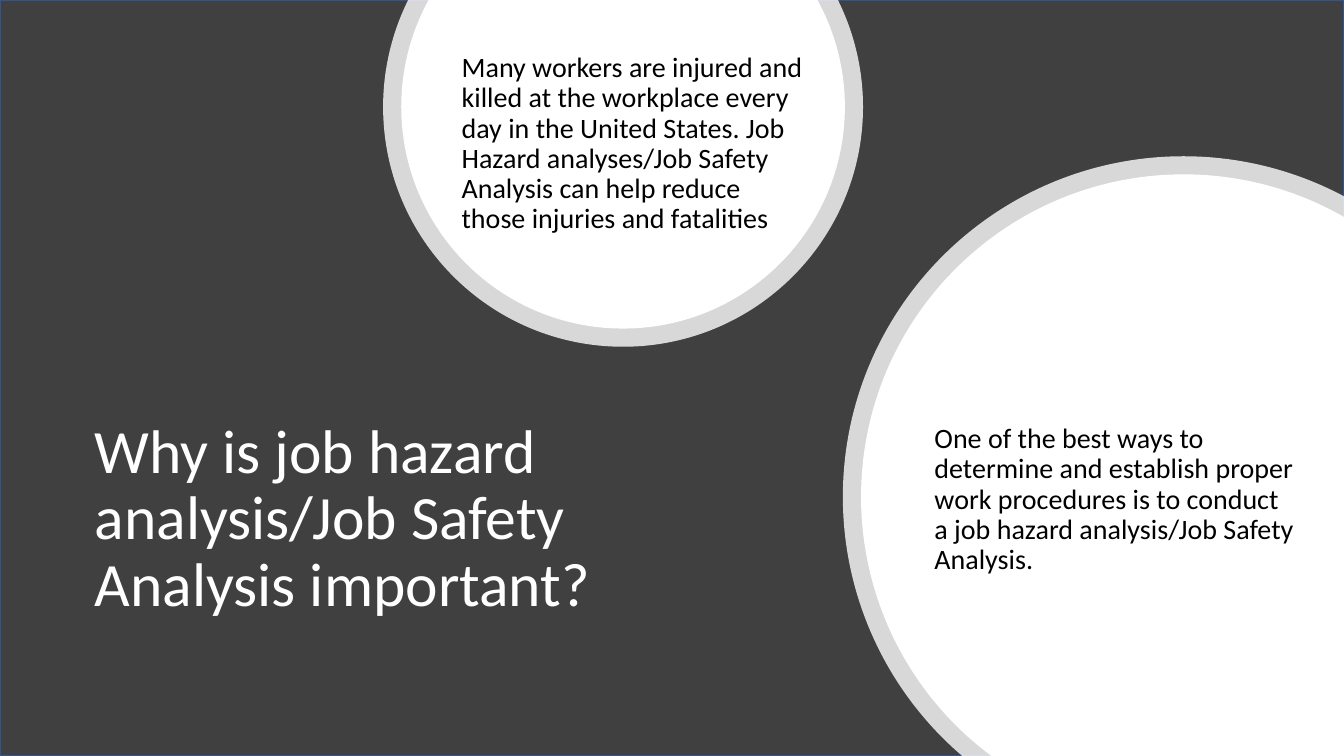
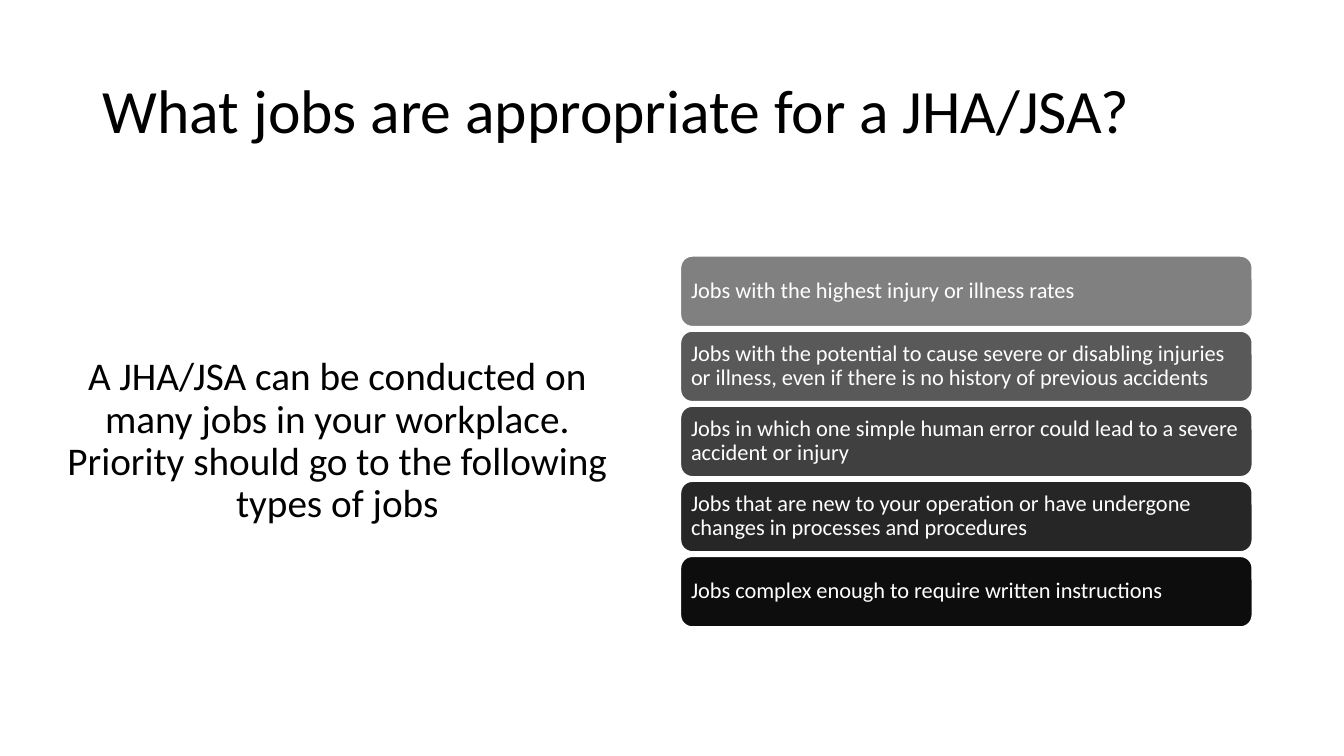
from itertools import pairwise
from math import acos, asin, cos, degrees, radians, sin, tan

from lxml import etree
from pptx import Presentation
from pptx.dml.color import RGBColor
from pptx.enum.shapes import MSO_SHAPE
from pptx.enum.text import MSO_ANCHOR, MSO_AUTO_SIZE, PP_ALIGN
from pptx.oxml.ns import qn
from pptx.util import Inches, Pt

RECTANGLE, ROUNDED = MSO_SHAPE.RECTANGLE, MSO_SHAPE.ROUNDED_RECTANGLE
MIDDLE, NO_AUTOFIT = MSO_ANCHOR.MIDDLE, MSO_AUTO_SIZE.NONE
LEFT, CENTER = PP_ALIGN.LEFT, PP_ALIGN.CENTER

FONT = "Calibri"
WHITE = RGBColor(0xFF, 0xFF, 0xFF)
BLACK = RGBColor(0, 0, 0)
CHARCOAL = RGBColor(0x40, 0x40, 0x40)
EDGE_BLUE = RGBColor(0x32, 0x54, 0x91)
SLIDE_WIDTH, SLIDE_HEIGHT = 13.33, 7.5
TITLE_SIZE = 44

# Content: slide 1
WHY_TITLE = "Why is job hazard analysis/Job Safety Analysis important?"
RING = 0.18
BUBBLES = [  # centre x, centre y, outer radius, text box, text
    (6.18, 1.06, 2.38, (4.48, 0.22, 3.58, 2.42),
     "Many workers are injured and killed at the workplace every day in the "
     "United States. Job Hazard analyses/Job Safety Analysis can help reduce "
     "those injuries and fatalities"),
    (11.74, 4.93, 3.38, (9.17, 3.44, 3.8, 3.04),
     "One of the best ways to determine and establish proper work procedures "
     "is to conduct a job hazard analysis/Job Safety Analysis."),
]

# Content: slide 2
JOBS_TITLE = "What jobs are appropriate for a JHA/JSA?"
PRIORITY = ("A JHA/JSA can be conducted on many jobs in your workplace. "
            "Priority should go to the following types of jobs")
JOB_TYPES = [  # grey level, text
    (0x80, "Jobs with the highest injury or illness rates"),
    (0x59, "Jobs with the potential to cause severe or disabling injuries or "
           "illness, even if there is no history of previous accidents"),
    (0x40, "Jobs in which one simple human error could lead to a severe "
           "accident or injury"),
    (0x26, "Jobs that are new to your operation or have undergone changes in "
           "processes and procedures"),
    (0x0D, "Jobs complex enough to require written instructions"),
]
CARD_LEFT, CARD_TOP, CARD_WIDTH, CARD_HEIGHT = 6.75, 2.54, 5.67, 0.7
CARD_BOTTOM = 6.22
CARD_STEP = (CARD_BOTTOM - CARD_TOP - CARD_HEIGHT) / (len(JOB_TYPES) - 1)


def write(shape, text, size, color, align=LEFT, before=0):
    frame = shape.text_frame
    frame.word_wrap = True
    frame.auto_size = NO_AUTOFIT
    frame.vertical_anchor = MIDDLE
    paragraph = frame.paragraphs[0]
    paragraph.alignment = align
    paragraph.line_spacing = 0.9
    paragraph.space_before = Pt(before)
    run = paragraph.add_run()
    run.text = text
    run.font.name, run.font.size = FONT, Pt(size)
    run.font.color.rgb = color


def paint(shape, fill, line=None):
    shape.shadow.inherit = False
    shape.fill.solid()
    shape.fill.fore_color.rgb = fill
    if line is None:
        shape.line.fill.background()
    else:
        shape.line.color.rgb = line
        shape.line.width = Pt(1)


def add_titled_slide(deck, title, box, color):
    slide = deck.slides.add_slide(deck.slide_layouts[5])
    heading = slide.shapes.title
    heading.left, heading.top, heading.width, heading.height = map(Inches, box)
    write(heading, title, TITLE_SIZE, color)
    return slide


def add_body(slide, box, text, size, align=LEFT):
    body = slide.shapes.add_textbox(*map(Inches, box))
    write(body, text, size, BLACK, align, before=10)


def visible_arc(x, y, radius):
    """Return the angles where the visible arc starts, turns and ends."""
    if x + radius > SLIDE_WIDTH:  # cut off by the bottom and right edges
        start = 180 - degrees(asin((SLIDE_HEIGHT - y) / radius))
        end = 360 - degrees(acos((SLIDE_WIDTH - x) / radius))
    else:  # cut off by the top edge
        start = -degrees(asin(y / radius))
        end = 180 - start
    turns = [angle for angle in (0, 90, 180, 270) if start < angle < end]
    return [radians(angle) for angle in (start, *turns, end)]


def add_disc(slide, x, y, radius, opacity=None):
    """Draw a white circle cut off at the slide edges."""
    angles = visible_arc(x, y, radius)

    def place(angle, pull=0):
        return (Inches(x + radius * (cos(angle) - pull * sin(angle))),
                Inches(y + radius * (sin(angle) + pull * cos(angle))))

    stops = [place(angle) for angle in angles]
    if x + radius > SLIDE_WIDTH:
        stops.append((Inches(SLIDE_WIDTH), Inches(SLIDE_HEIGHT)))
    builder = slide.shapes.build_freeform(*stops[0])
    builder.add_line_segments(stops[1:], close=True)
    disc = builder.convert_to_shape()
    paint(disc, WHITE)

    # Bend the straight sides into arcs
    sides = list(disc._element.iter(qn("a:lnTo")))
    for side, (start, end) in zip(sides, pairwise(angles)):
        pull = 4 / 3 * tan((end - start) / 4)
        side.tag = qn("a:cubicBezTo")
        side.remove(side[0])
        for across, down in (place(start, pull), place(end, -pull), place(end)):
            point = etree.SubElement(side, qn("a:pt"))
            point.set("x", str(across - disc.left))
            point.set("y", str(down - disc.top))

    if opacity is not None:
        tone = next(disc._element.iter(qn("a:srgbClr")))
        etree.SubElement(tone, qn("a:alpha")).set("val", str(opacity * 1000))


def build_why(deck):
    slide = add_titled_slide(deck, WHY_TITLE, (0.84, 3.83, 6.62, 2.65), WHITE)
    backdrop = slide.shapes.add_shape(
        RECTANGLE, 0, 0, deck.slide_width, deck.slide_height)
    paint(backdrop, CHARCOAL, EDGE_BLUE)
    # Send the backdrop behind the title
    slide.shapes._spTree.insert(2, backdrop._element)
    for x, y, radius, box, text in BUBBLES:
        add_disc(slide, x, y, radius, opacity=80)
        add_disc(slide, x, y, radius - RING)
        add_body(slide, box, text, 20)


def build_jobs(deck):
    slide = add_titled_slide(deck, JOBS_TITLE, (0.92, 0.4, 11.5, 1.45), BLACK)
    add_body(slide, (0.51, 2, 5.67, 4.76), PRIORITY, 28, CENTER)
    # Cards darken from top to bottom
    for row, (grey, text) in enumerate(JOB_TYPES):
        card = slide.shapes.add_shape(
            ROUNDED, Inches(CARD_LEFT), Inches(CARD_TOP + row * CARD_STEP),
            Inches(CARD_WIDTH), Inches(CARD_HEIGHT))
        paint(card, RGBColor(grey, grey, grey), WHITE)
        frame = card.text_frame
        frame.margin_left = frame.margin_right = Inches(0.07)
        frame.margin_top = frame.margin_bottom = Inches(0.07)
        write(card, text, 16, WHITE)


def main():
    deck = Presentation()
    deck.slide_width = Inches(SLIDE_WIDTH)
    deck.slide_height = Inches(SLIDE_HEIGHT)
    build_why(deck)
    build_jobs(deck)
    deck.save("out.pptx")


if __name__ == "__main__":
    main()
